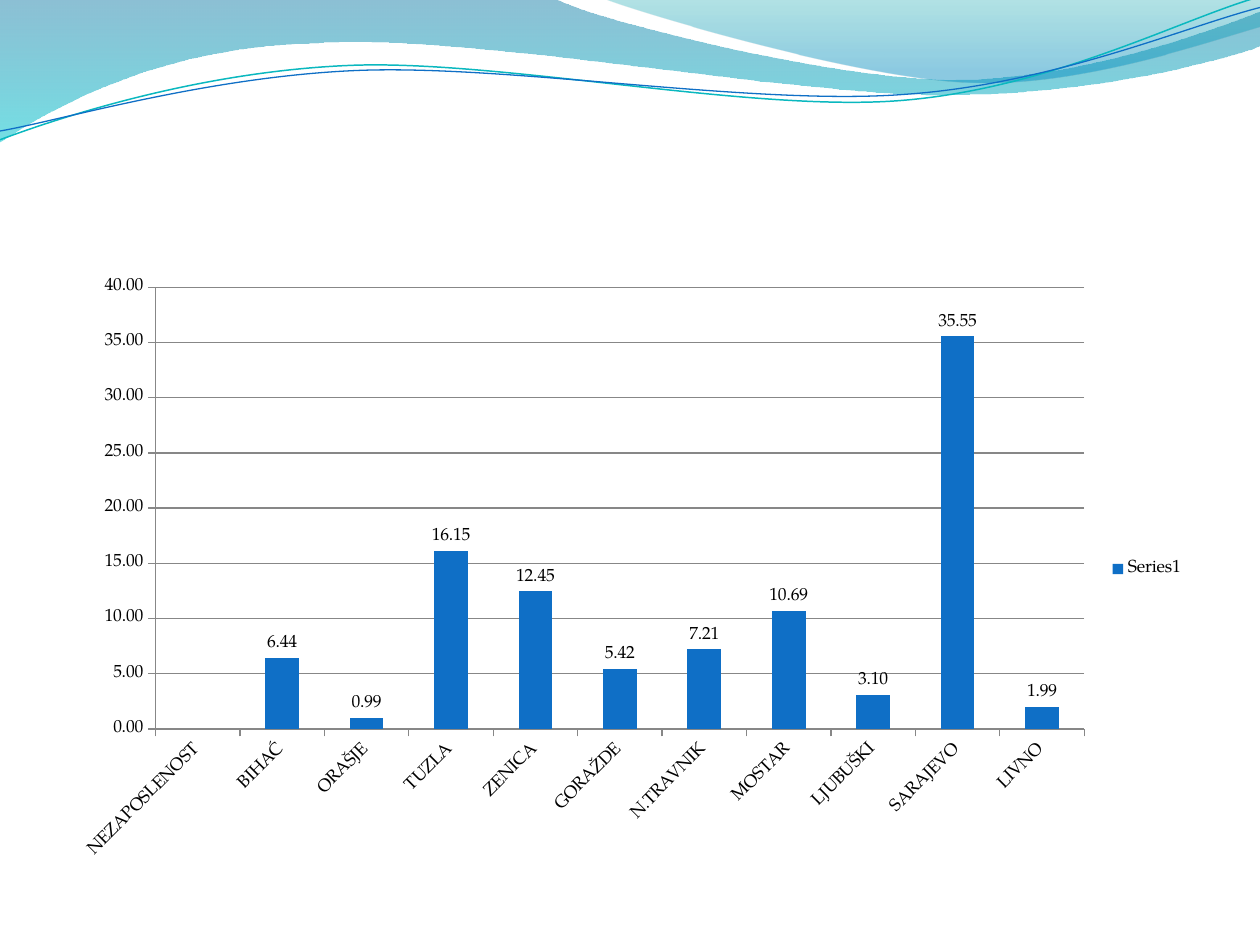
import math

from lxml import etree
from pptx import Presentation, util as u
from pptx.chart import data as chart_data
from pptx.dml import color
from pptx.enum import chart as ch
from pptx.oxml import ns

COLORS = {"blue": "0F6FC6", "teal": "0AB8BF", "deep": "0074A1", "aqua": "00C6CF",
          "sea": "00A1A9", "sky": "008BBF", "text": "000000"}
FONT = "TeX Gyre Pagella"
NUMBERS = "#,##0.00"
TILT = -2.7
PIVOT = (5, 0.58)

# Each outline is a start point, then line ends (one point) or cubic curves (three points).
WIDE_WAVE = [[(0, 0)], [(4.4, -0.01)], [(4.76, 0.17), (6.64, 0.63), (7.58, 0.63)],
             [(8.53, 0.63), (9.58, 0.26), (10, 0.09)], [(10.01, 0.36)],
             [(9.83, 0.44), (8.7, 0.76), (7.46, 0.75)],
             [(6.22, 0.75), (3.82, 0.28), (2.57, 0.34)],
             [(1.29, 0.36), (0.46, 0.83), (-0.01, 1.13)], [(0, 0)]]
RIGHT_WAVE = [[(4.79, -0.01)], [(5.09, 0.11), (6.82, 0.62), (7.69, 0.65)],
              [(8.56, 0.69), (9.61, 0.32), (10, 0.21)], [(10, 0)], [(4.79, -0.01)]]
TEAL_LINE = [[(0, 1.11)], [(0.48, 0.93), (1.58, 0.57), (2.77, 0.52)],
             [(3.95, 0.47), (5.93, 0.89), (7.13, 0.8)],
             [(8.33, 0.71), (9.38, 0.15), (9.98, -0.02)]]
BLUE_LINE = [[(0, 1.04)], [(0.47, 0.96), (1.64, 0.61), (2.83, 0.56)],
             [(4.03, 0.51), (5.97, 0.84), (7.17, 0.75)],
             [(8.36, 0.67), (9.41, 0.21), (10, 0.06)]]

UNEMPLOYMENT = {"NEZAPOSLENOST": None, "BIHAĆ": 6.44, "ORAŠJE": 0.99, "TUZLA": 16.15,
                "ZENICA": 12.45, "GORAŽDE": 5.42, "N.TRAVNIK": 7.21, "MOSTAR": 10.69,
                "LJUBUŠKI": 3.1, "SARAJEVO": 35.55, "LIVNO": 1.99}


def rgb(name):
    return color.RGBColor.from_string(COLORS[name])


def turn(point, degrees):
    """Rotate a point clockwise about the pivot."""
    angle = math.radians(degrees)
    dx, dy = point[0] - PIVOT[0], point[1] - PIVOT[1]
    return (PIVOT[0] + dx * math.cos(angle) - dy * math.sin(angle),
            PIVOT[1] + dx * math.sin(angle) + dy * math.cos(angle))


class SlideBuilder:
    """Holds the chart style and the slide being filled."""

    def __init__(self, slide, size=10):
        self.slide = slide
        self.size = size

    def outline(self, segments, close):
        """Build a freeform through all points, then bend each group of three into a curve."""
        start, *rest = [(u.Inches(x), u.Inches(y)) for segment in segments for x, y in segment]
        builder = self.slide.shapes.build_freeform(*start)
        builder.add_line_segments(rest, close=close)
        shape = builder.convert_to_shape()
        shape.shadow.inherit = False
        lines = iter(list(shape.element.iter(ns.qn("a:lnTo"))))
        for segment in segments[1:]:
            first, *others = [next(lines) for _ in segment]
            if others:
                first.tag = ns.qn("a:cubicBezTo")
                for line in others:
                    first.append(line[0])
                    line.getparent().remove(line)
        return shape

    def wave(self, segments, stops):
        """Draw a filled wave; stops are (position, colour, opacity percent), top first."""
        shape = self.outline(segments, True)
        shape.line.fill.background()
        shape.fill.gradient()
        shape.fill.gradient_angle = 270
        for stop, (position, name, _) in zip(shape.fill.gradient_stops, stops):
            stop.position = position
            stop.color.rgb = rgb(name)
        tints = shape.element.spPr.iter(ns.qn("a:srgbClr"))
        for tint, (_, _, opacity) in zip(tints, stops):
            etree.SubElement(tint, ns.qn("a:alpha")).set("val", str(opacity * 1000))

    def curve(self, segments, name, width):
        """Draw an open curve as a level shape tilted into place."""
        level = [[turn(point, -TILT) for point in segment] for segment in segments]
        shape = self.outline(level, False)
        shape.rotation = TILT
        shape.fill.background()
        shape.line.color.rgb = rgb(name)
        shape.line.width = u.Pt(width)

    def columns(self, values, left, top, width, height):
        data = chart_data.CategoryChartData(number_format=NUMBERS)
        data.categories = list(values)
        data.add_series("Series1", list(values.values()))
        chart = self.slide.shapes.add_chart(
            ch.XL_CHART_TYPE.COLUMN_CLUSTERED, u.Inches(left), u.Inches(top),
            u.Inches(width), u.Inches(height), data).chart
        chart.has_title = False
        chart.font.name = FONT
        chart.font.size = u.Pt(self.size)
        chart.font.color.rgb = rgb("text")

        chart.has_legend = True
        chart.legend.position = ch.XL_LEGEND_POSITION.RIGHT
        chart.legend.include_in_layout = False

        for axis in (chart.category_axis, chart.value_axis):
            axis.major_tick_mark = ch.XL_TICK_MARK.OUTSIDE
            axis.minor_tick_mark = ch.XL_TICK_MARK.NONE
        chart.value_axis.has_major_gridlines = True
        chart.value_axis.tick_labels.number_format = NUMBERS
        chart.value_axis.tick_labels.number_format_is_linked = False

        plot = chart.plots[0]
        plot.gap_width = 150
        plot.vary_by_categories = False
        series = plot.series[0]
        series.format.fill.solid()
        series.format.fill.fore_color.rgb = rgb("blue")
        labels = series.data_labels
        labels.show_value = True
        labels.number_format = NUMBERS
        labels.number_format_is_linked = False


def main():
    deck = Presentation()
    deck.slide_width, deck.slide_height = u.Inches(10), u.Inches(7.5)
    page = SlideBuilder(deck.slides.add_slide(deck.slide_layouts[6]))
    page.wave(WIDE_WAVE, [(0, "deep", 45), (1, "aqua", 55)])
    page.wave(RIGHT_WAVE, [(0, "sea", 30), (0.8, "sky", 45)])
    page.curve(TEAL_LINE, "teal", 0.85)
    page.curve(BLUE_LINE, "blue", 0.75)
    page.columns(UNEMPLOYMENT, 0.5, 127 / 60, 9, 4.8)
    deck.save("out.pptx")


if __name__ == "__main__":
    main()
